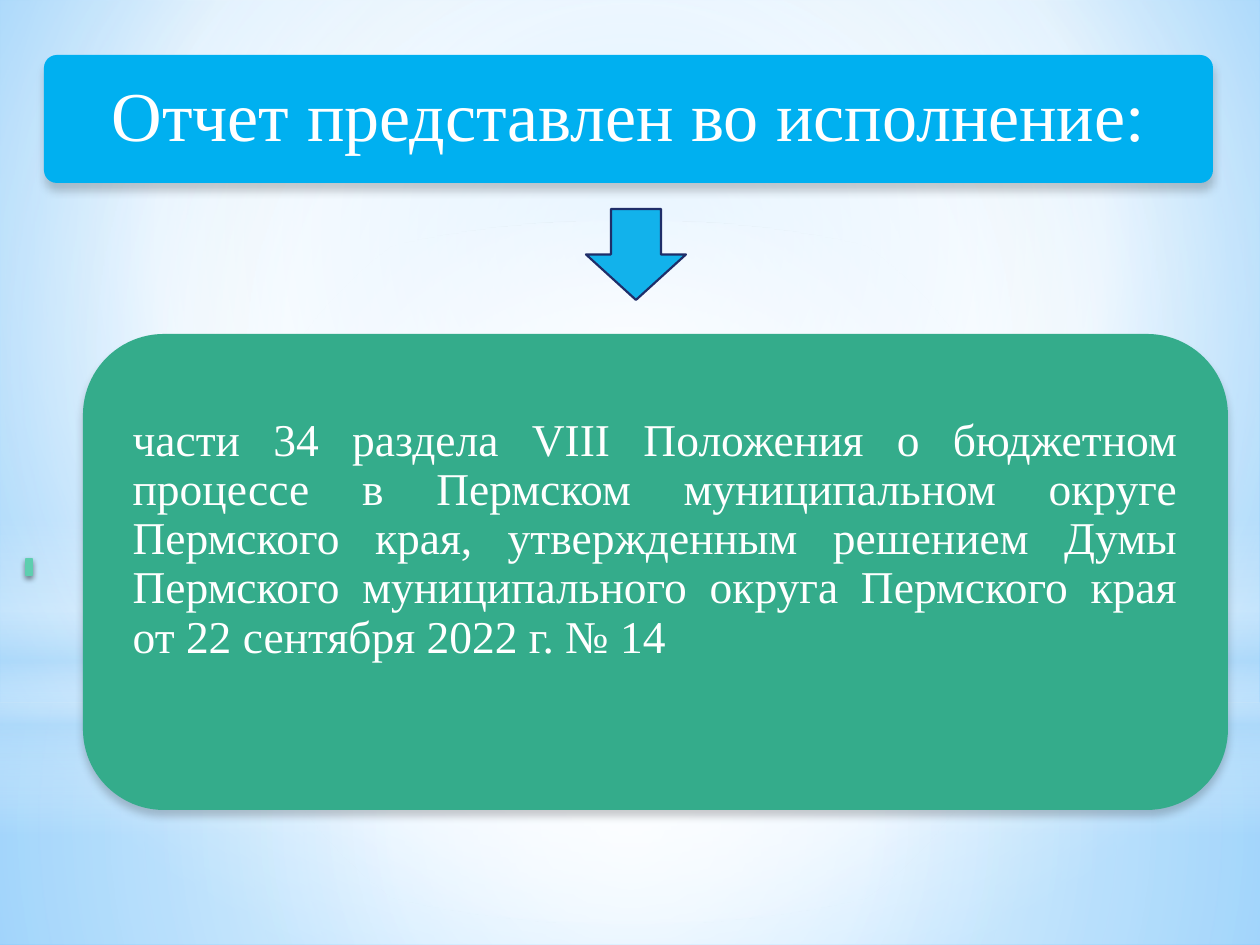
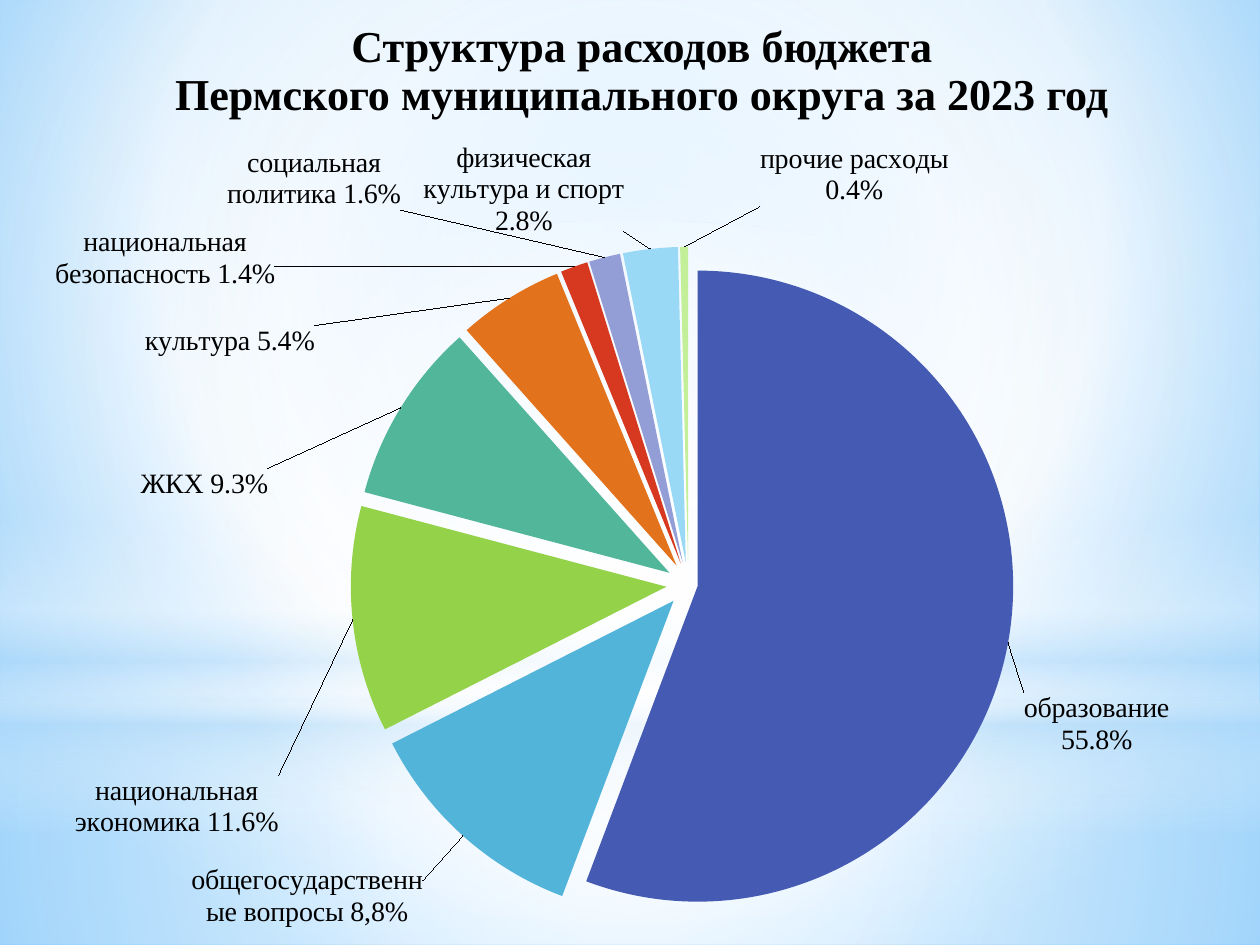
from lxml import etree
from pptx import Presentation
from pptx.chart.data import CategoryChartData
from pptx.dml.color import RGBColor
from pptx.enum.chart import XL_CHART_TYPE, XL_LABEL_POSITION
from pptx.enum.shapes import MSO_SHAPE as SHAPE
from pptx.enum.text import MSO_ANCHOR, PP_ALIGN
from pptx.oxml import parse_xml
from pptx.oxml.ns import nsdecls, qn
from pptx.util import Pt

PX = 914400 / 126
SLIDE_SIZE = (1260, 945)
FONT = "Times New Roman"

WHITE = RGBColor(0xFF, 0xFF, 0xFF)
BLACK = RGBColor(0x00, 0x00, 0x00)
SKY = RGBColor(0x00, 0xB0, 0xF0)
GREEN = RGBColor(0x34, 0xAC, 0x8B)
MINT = RGBColor(0x5D, 0xCE, 0xAF)
ARROW_BLUE = RGBColor(0x12, 0xB2, 0xEB)
NAVY = RGBColor(0x1F, 0x2E, 0x69)
PALE = RGBColor(0xB4, 0xDC, 0xFA)
BACK_EDGE = RGBColor(0x9E, 0xD5, 0xFF)
BACK_OUTER = RGBColor(0x5B, 0xB9, 0xFF)

# Gradient stops: position %, colour, opacity %
BACKGROUND_STOPS = [(0, BACK_EDGE, 100), (60, WHITE, 100), (100, BACK_OUTER, 100)]
CENTRE = (50, 50, 50, 50)
# Shape, box, stops, focus of a round gradient (None for a vertical one)
BACKDROP = [
    (SHAPE.RECTANGLE, (0, 703, 1260, 242),
     [(0, WHITE, 91), (37, WHITE, 76), (100, PALE, 79)], CENTRE),
    (SHAPE.RECTANGLE, (0, 0, 1260, 703),
     [(0, WHITE, 89), (48, WHITE, 62), (100, PALE, 79)], CENTRE),
    (SHAPE.RECTANGLE, (0, 519, 1260, 315),
     [(0, WHITE, 0), (29, WHITE, 30), (45, PALE, 40), (55, WHITE, 26),
      (65, PALE, 60), (100, WHITE, 0)], None),
    (SHAPE.OVAL, (0, 221, 1260, 703), [(0, WHITE, 100), (56, WHITE, 0)], CENTRE),
]

REPORT_TITLE = "Отчет представлен во исполнение:"
REPORT_BASIS = (
    "части 34 раздела VIII Положения о бюджетном процессе в Пермском "
    "муниципальном округе Пермского края, утвержденным решением Думы Пермского "
    "муниципального округа Пермского края от 22 сентября 2022 г. № 14"
)

CHART_TITLE = ["Структура расходов бюджета", "Пермского муниципального округа за 2023 год"]
CHART_BOX = (19, 142, 1216, 786)
PLOT_AREA = {"x": 0.291, "y": 0.143, "w": 0.519, "h": 0.84}
# Category, share, slice colour, explosion %, label shift in px, own label text
EXPENSES = [
    ("образование", 0.558, "455AB2", 3, (9, 49), None),
    ("общегосударственные вопросы", 0.118, "53B4D9", 7, (-35, 39),
     "общегосударственные вопросы 8,8%"),
    ("национальная экономика", 0.116, "94D24A", 7, (-67, 155), None),
    ("ЖКХ", 0.093, "52B69A", 7, (-127, 96), None),
    ("культура", 0.054, "E2731C", 7, (-191, 65), None),
    ("национальная безопасность", 0.014, "D63820", 7, (-297, 30), None),
    ("социальная политика", 0.016, "939ED6", 7, (-202, -40), None),
    ("физическая культура и спорт", 0.028, "9AD9F5", 7, (-26, -10), None),
    ("прочие расходы", 0.004, "C3EF98", 7, (170, -33), None),
]


def px(*lengths):
    return [round(length * PX) for length in lengths]


def paint_gradient(fill, properties, stops, focus):
    """Put a gradient in the place of the fill held by a properties element."""
    fill.background()
    stop_xml = "".join(
        f'<a:gs pos="{position * 1000}"><a:srgbClr val="{color}">'
        f'<a:alpha val="{opacity * 1000}"/></a:srgbClr></a:gs>'
        for position, color, opacity in stops)
    if focus:
        sides = " ".join(f'{side}="{value * 1000}"' for side, value in zip("ltrb", focus))
        direction = f'<a:path path="circle"><a:fillToRect {sides}/></a:path>'
    else:
        direction = '<a:lin ang="5400000" scaled="0"/>'
    gradient = parse_xml(f'<a:gradFill {nsdecls("a")} rotWithShape="1">'
                         f'<a:gsLst>{stop_xml}</a:gsLst>{direction}</a:gradFill>')
    properties.replace(properties.find(qn("a:noFill")), gradient)


def add_shape(slide, kind, box, color=None, corner=None, shadow=None):
    """Add a shape without outline; shadow is (opacity %, blur pt, distance pt)."""
    shape = slide.shapes.add_shape(kind, *px(*box))
    shape.shadow.inherit = False
    shape.line.fill.background()
    if color is not None:
        shape.fill.solid()
        shape.fill.fore_color.rgb = color
    if corner is not None:
        shape.adjustments[0] = corner
    if shadow:
        opacity, blur, distance = shadow
        shape._element.spPr.find(qn("a:effectLst")).append(parse_xml(
            f'<a:outerShdw {nsdecls("a")} blurRad="{Pt(blur)}" dist="{Pt(distance)}" '
            f'dir="5400000" rotWithShape="0"><a:srgbClr val="000000">'
            f'<a:alpha val="{opacity * 1000}"/></a:srgbClr></a:outerShdw>'))
    return shape


def write(shape, lines, size, color, align, bold=False):
    frame = shape.text_frame
    frame.word_wrap = True
    frame.vertical_anchor = MSO_ANCHOR.MIDDLE
    for index, line in enumerate(lines):
        paragraph = frame.paragraphs[0] if index == 0 else frame.add_paragraph()
        paragraph.text = line
        paragraph.alignment = align
        paragraph.line_spacing = 0.9
        set_font(paragraph.font, size, color)
        paragraph.font.bold = bold
    return frame


def set_font(font, size, color):
    font.name, font.size = FONT, Pt(size)
    font.color.rgb = color


def add_slide(presentation):
    """Add a blank slide with the shared background and glow."""
    slide = presentation.slides.add_slide(presentation.slide_layouts[6])
    fill = slide.background.fill
    fill.background()
    properties = slide._element.find(".//" + qn("p:bgPr"))
    paint_gradient(fill, properties, BACKGROUND_STOPS, (20, 10, 20, 60))
    for kind, box, stops, focus in BACKDROP:
        shape = add_shape(slide, kind, box)
        paint_gradient(shape.fill, shape._element.spPr, stops, focus)
    return slide


def build_report_slide(presentation):
    slide = add_slide(presentation)
    soft_shadow = (20, 5, 4)
    band = add_shape(slide, SHAPE.ROUNDED_RECTANGLE, (44, 55, 1169, 128), SKY, 0.1, soft_shadow)
    write(band, [REPORT_TITLE], 40, WHITE, PP_ALIGN.CENTER)
    add_shape(slide, SHAPE.ROUNDED_RECTANGLE, (25, 558, 8, 18), MINT, 0.17, (45, 3.1, 1.8))
    panel = add_shape(slide, SHAPE.ROUNDED_RECTANGLE, (83, 334, 1145, 476), GREEN, 0.17,
                      soft_shadow)
    frame = write(panel, [REPORT_BASIS], 26, WHITE, PP_ALIGN.JUSTIFY)
    frame.margin_left, frame.margin_right, frame.margin_bottom = px(26, 26, 70)
    arrow = add_shape(slide, SHAPE.DOWN_ARROW, (586, 209, 100, 91), ARROW_BLUE)
    arrow.line.color.rgb = NAVY
    arrow.line.width = Pt(1.25)


def layout_xml(places, inner=False):
    target = '<c:layoutTarget val="inner"/>' if inner else ""
    modes = '<c:xMode val="edge"/><c:yMode val="edge"/>' if inner else ""
    values = "".join(f'<c:{key} val="{value:.3f}"/>' for key, value in places.items())
    return parse_xml(f'<c:layout {nsdecls("c")}><c:manualLayout>{target}{modes}{values}'
                     f'</c:manualLayout></c:layout>')


def add_number_format(label):
    number_format = parse_xml(
        f'<c:numFmt {nsdecls("c")} formatCode="0.0%" sourceLinked="0"/>')
    label.find(qn("c:txPr")).addprevious(number_format)


def show_category(label):
    """Show the category before the value, parted by a space."""
    label.find(qn("c:showCatName")).set("val", "1")
    label.find(qn("c:showVal")).set("val", "1")
    separator = etree.Element(qn("c:separator"))
    separator.text = " "
    label.find(qn("c:showBubbleSize")).addnext(separator)


def place_label(label, shift):
    x, y = shift
    places = {"x": x / CHART_BOX[2], "y": y / CHART_BOX[3]}
    label.find(qn("c:idx")).addnext(layout_xml(places))


def build_expenses_slide(presentation):
    slide = add_slide(presentation)
    title = slide.shapes.add_textbox(*px(44, 17, 1196, 110))
    write(title, CHART_TITLE, 25.2, BLACK, PP_ALIGN.CENTER, bold=True)

    data = CategoryChartData(number_format="0.0%")
    data.categories = [expense[0] for expense in EXPENSES]
    data.add_series("Series 1", [expense[1] for expense in EXPENSES])
    chart = slide.shapes.add_chart(XL_CHART_TYPE.PIE, *px(*CHART_BOX), data).chart
    chart.has_legend = chart.has_title = False
    chart.font.name, chart.font.size = "Lato", Pt(18)
    chart.font.color.rgb = BLACK
    plot_area = chart._chartSpace.chart.plotArea
    for layout in plot_area.findall(qn("c:layout")):
        plot_area.remove(layout)
    plot_area.insert(0, layout_xml(PLOT_AREA, inner=True))

    series = chart.plots[0].series[0]
    labels = series.data_labels
    set_font(labels.font, 16, BLACK)
    labels.number_format, labels.number_format_is_linked = "0.0%", False
    labels.position = XL_LABEL_POSITION.OUTSIDE_END
    show_category(labels._element)
    for index, (_, _, color, explosion, shift, own_text) in enumerate(EXPENSES):
        point = series.points[index]
        point.format.fill.solid()
        point.format.fill.fore_color.rgb = RGBColor.from_string(color)
        point.format.line.fill.background()
        slice_xml = series._element.findall(qn("c:dPt"))[index]
        slice_xml.find(qn("c:spPr")).addprevious(
            parse_xml(f'<c:explosion {nsdecls("c")} val="{explosion}"/>'))
        data_label = point.data_label
        data_label.position = XL_LABEL_POSITION.OUTSIDE_END
        if own_text:
            paragraph = data_label.text_frame.paragraphs[0]
            run = paragraph.add_run()
            run.text = own_text
            set_font(run.font, 16, BLACK)
        else:
            set_font(data_label.font, 16, BLACK)
        label = labels._element.findall(qn("c:dLbl"))[index]
        if not own_text:
            add_number_format(label)
        show_category(label)
        place_label(label, shift)


def main():
    presentation = Presentation()
    presentation.slide_width, presentation.slide_height = px(*SLIDE_SIZE)
    build_report_slide(presentation)
    build_expenses_slide(presentation)
    presentation.save("out.pptx")


if __name__ == "__main__":
    main()
